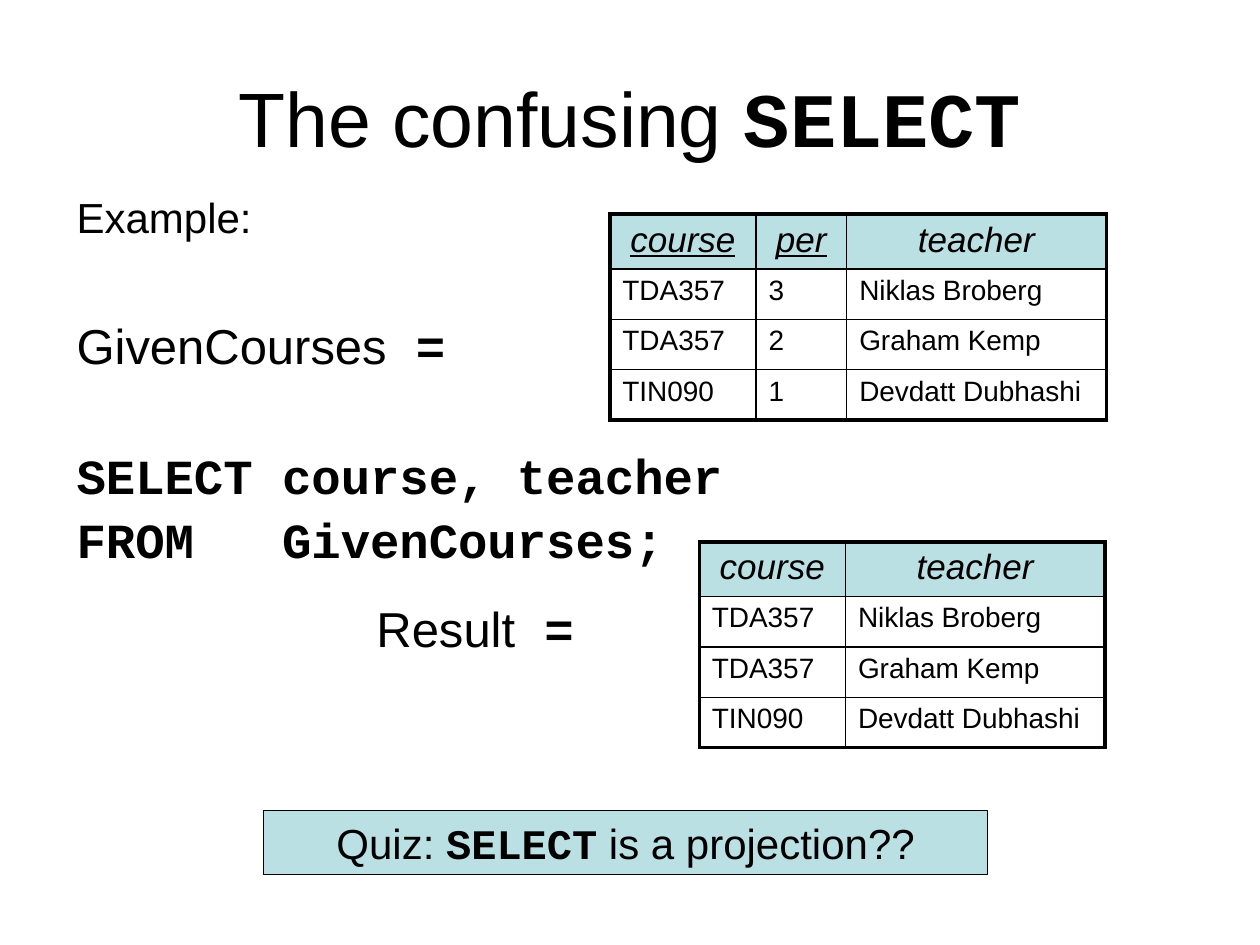
from dataclasses import dataclass

from lxml.etree import SubElement
from pptx import Presentation
from pptx.dml.color import RGBColor
from pptx.enum.shapes import MSO_SHAPE
from pptx.enum.text import MSO_ANCHOR, PP_ALIGN
from pptx.oxml.ns import qn
from pptx.util import Inches, Pt


@dataclass(frozen=True)
class Theme:
    ink: RGBColor = RGBColor(0, 0, 0)
    accent: RGBColor = RGBColor(0xBB, 0xE0, 0xE3)
    paper: RGBColor = RGBColor(255, 255, 255)
    prose: str = "Arial"
    code: str = "Courier New"
    title: int = 44
    large: int = 28
    medium: int = 24
    heading: int = 20
    cell: int = 16
    frame: float = 2.25
    rule: float = 1
    outline: float = 0.75


THEME = Theme()
COLUMNS, ROWS = 100, 75


def write(paragraph, text, size, code=False, italic=False, underline=False):
    run = paragraph.add_run()
    run.text = text
    font = run.font
    font.name = THEME.code if code else THEME.prose
    font.size, font.bold = Pt(size), code
    font.italic, font.underline = italic, underline
    font.color.rgb = THEME.ink


def draw_border(cell, side, width):
    edge = SubElement(cell._tc.get_or_add_tcPr(), qn(f"a:ln{side}"), w=str(Pt(width)))
    fill = SubElement(edge, qn("a:solidFill"))
    SubElement(fill, qn("a:srgbClr"), val=str(THEME.ink))


class SlideBuilder:
    """Places styled elements on a slide using a grid of columns and rows."""

    def __init__(self, deck, theme):
        self.theme = theme
        self.column = deck.slide_width / COLUMNS
        self.row = deck.slide_height / ROWS
        self.slide = deck.slides.add_slide(deck.slide_layouts[5])

    def place(self, left, top, width, height):
        return (int(left * self.column), int(top * self.row),
                int(width * self.column), int(height * self.row))

    def title(self, area, pieces):
        heading = self.slide.shapes.title
        heading.left, heading.top, heading.width, heading.height = self.place(*area)
        heading.text_frame.vertical_anchor = MSO_ANCHOR.MIDDLE
        paragraph = heading.text_frame.paragraphs[0]
        paragraph.alignment = PP_ALIGN.CENTER
        for text, code in pieces:
            write(paragraph, text, self.theme.title, code=code)

    def body(self, area, lines):
        frame = self.slide.shapes.add_textbox(*self.place(*area)).text_frame
        frame.word_wrap = True
        for number, (gap, indent, size, pieces) in enumerate(lines):
            paragraph = frame.add_paragraph() if number else frame.paragraphs[0]
            paragraph.space_before = Pt(gap)
            paragraph._p.get_or_add_pPr().set("marL", str(int(indent * self.column)))
            for text, code in pieces:
                write(paragraph, text, size, code=code)

    def relation(self, left, top, widths, heights, records, keys=()):
        area = self.place(left, top, sum(widths), sum(heights))
        grid = self.slide.shapes.add_table(len(heights), len(widths), *area).table
        for column, width in zip(grid.columns, widths):
            column.width = int(width * self.column)
        for row, height in zip(grid.rows, heights):
            row.height = int(height * self.row)
        for r, record in enumerate(records):
            for c, value in enumerate(record):
                outer = {"L": c == 0, "R": c == len(widths) - 1,
                         "T": r == 0, "B": r == len(heights) - 1}
                self.cell(grid.cell(r, c), value, r == 0, value in keys, outer)

    def cell(self, cell, value, header, key, outer):
        theme = self.theme
        paragraph = cell.text_frame.paragraphs[0]
        paragraph.alignment = PP_ALIGN.CENTER if header else PP_ALIGN.LEFT
        write(paragraph, value, theme.heading if header else theme.cell,
              italic=header, underline=key)
        for side, framed in outer.items():
            draw_border(cell, side, theme.frame if framed else theme.rule)
        cell.fill.solid()
        cell.fill.fore_color.rgb = theme.accent if header else theme.paper

    def banner(self, area, pieces):
        box = self.slide.shapes.add_shape(MSO_SHAPE.RECTANGLE, *self.place(*area))
        box.shadow.inherit = False
        box.fill.solid()
        box.fill.fore_color.rgb = self.theme.accent
        box.line.color.rgb = self.theme.ink
        box.line.width = Pt(self.theme.outline)
        box.text_frame.vertical_anchor = MSO_ANCHOR.MIDDLE
        paragraph = box.text_frame.paragraphs[0]
        paragraph.alignment = PP_ALIGN.CENTER
        for text, code in pieces:
            write(paragraph, text, self.theme.medium, code=code)


def main():
    deck = Presentation()
    deck.slide_width, deck.slide_height = Inches(10), Inches(7.5)
    builder = SlideBuilder(deck, THEME)

    builder.title((5, 3, 90, 12.5), [("The confusing ", False), ("SELECT", True)])
    builder.body((5.1, 14.7, 90, 49.5), [
        (2.5, 0, THEME.medium, [("Example:", False)]),
        (42, 0, THEME.large, [("GivenCourses", False), (" =", True)]),
        (41, 0, THEME.large, [("SELECT course, teacher", True)]),
        (2.5, 0, THEME.large, [("FROM   GivenCourses;", True)]),
        (17.5, 23.8, THEME.large, [("Result", False), (" =", True)]),
    ])

    given_courses = [
        ("course", "per", "teacher"),
        ("TDA357", "3", "Niklas Broberg"),
        ("TDA357", "2", "Graham Kemp"),
        ("TIN090", "1", "Devdatt Dubhashi"),
    ]
    result = [(course, teacher) for course, _, teacher in given_courses]
    heights = [4.3, 4, 4, 4]
    builder.relation(48.4, 17, [11.6, 7.2, 20.6], heights, given_courses,
                     keys=("course", "per"))
    builder.relation(55.5, 43, [11.6, 20.6], heights, result)

    builder.banner((20.9, 64.3, 57.5, 5.1), [
        ("Quiz: ", False), ("SELECT", True), (" is a projection??", False)])
    deck.save("out.pptx")


if __name__ == "__main__":
    main()
